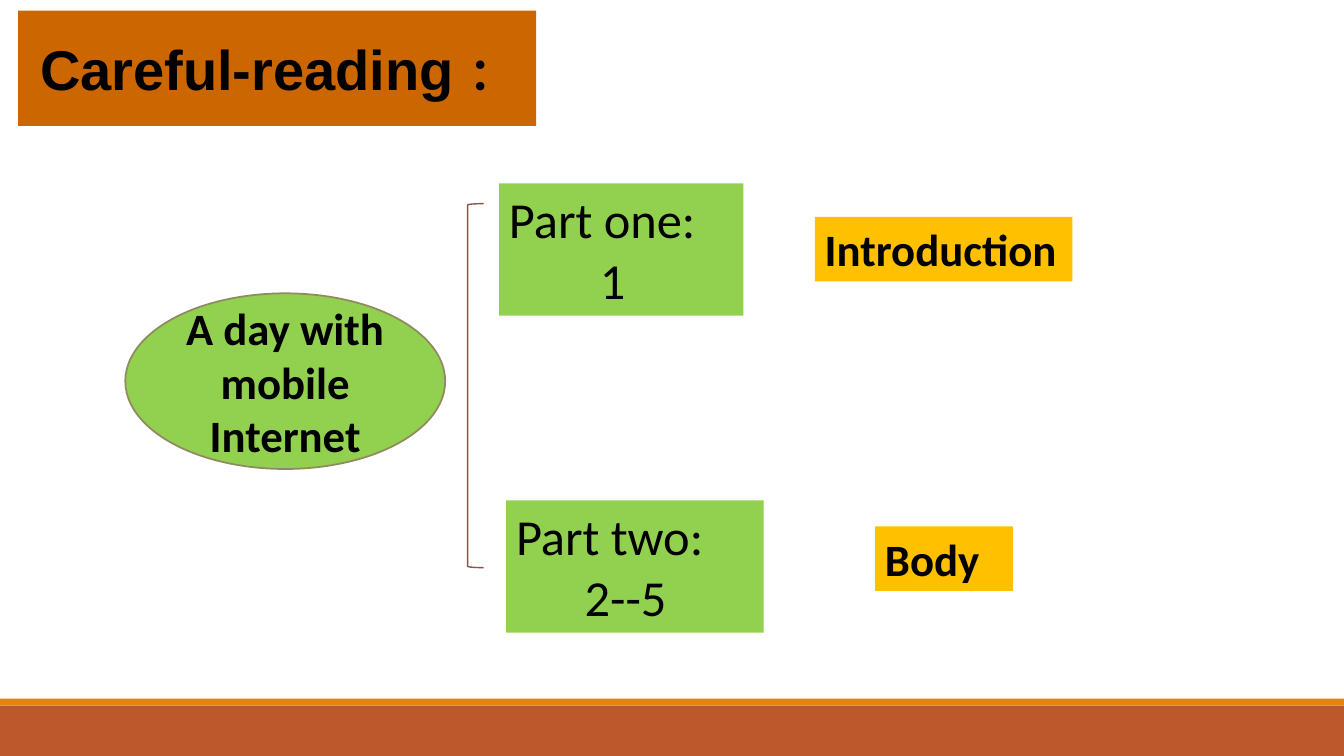
from pptx import Presentation
from pptx.dml.color import RGBColor
from pptx.enum.shapes import MSO_SHAPE as Kind
from pptx.enum.text import MSO_ANCHOR as Anchor, MSO_AUTO_SIZE as Fit, PP_ALIGN as Align
from pptx.util import Pt

WIDE, HIGH = 960, 540
HUES = {
    "brick": "BD582C", "amber": "E48312", "rust": "CC6600", "lime": "92D050",
    "olive": "908B5F", "brown": "865640", "gold": "FFC000", "black": "000000",
}


def hue(name):
    return RGBColor.from_string(HUES[name])


def write(para, text, size=32, font="Calibri", bold=False, align=Align.LEFT, indent=0):
    run = para.add_run()
    run.text = text
    run.font.size = Pt(size)
    run.font.name = font
    run.font.bold = bold
    run.font.color.rgb = hue("black")
    para.alignment = align
    if indent:
        props = para._p.get_or_add_pPr()
        props.set("marL", str(Pt(indent)))
        props.set("indent", "0")


def draw(slide, box, kind=Kind.RECTANGLE, fill=None, line=None, weight=1):
    shape = slide.shapes.add_shape(kind, *map(Pt, box))
    shape.shadow.inherit = False
    if fill:
        shape.fill.solid()
        shape.fill.fore_color.rgb = hue(fill)
    else:
        shape.fill.background()
    if line:
        shape.line.color.rgb = hue(line)
        shape.line.width = Pt(weight)
    else:
        shape.line.fill.background()
    shape.text_frame.word_wrap = True
    return shape


def footer(slide, box):
    left, top, wide, high = box
    strip = 5
    draw(slide, (left, top + strip, wide, high - strip), fill="brick")
    draw(slide, (left, top, wide, strip), fill="amber")


def heading(slide, box):
    title = slide.shapes.title
    title.left, title.top, title.width, title.height = map(Pt, box)
    title.fill.solid()
    title.fill.fore_color.rgb = hue("rust")
    frame = title.text_frame
    frame.auto_size = Fit.NONE
    frame.vertical_anchor = Anchor.MIDDLE
    para = frame.paragraphs[0]
    for text, size in (("Careful-reading ", 40), ("：", 32)):
        write(para, text, size, font="Arial", bold=True, align=Align.CENTER)


def topic(slide, box):
    oval = draw(slide, box, Kind.OVAL, "lime", "olive", 1.25)
    oval.text_frame.vertical_anchor = Anchor.MIDDLE
    write(oval.text_frame.paragraphs[0], "A day with mobile Internet",
          bold=True, align=Align.CENTER)


def part(slide, box, name, paras, indent):
    frame = draw(slide, box, fill="lime").text_frame
    frame.vertical_anchor = Anchor.TOP
    write(frame.paragraphs[0], name, 36)
    write(frame.add_paragraph(), paras, 36, indent=indent)


def label(slide, box, text):
    frame = draw(slide, box, fill="gold").text_frame
    frame.vertical_anchor = Anchor.TOP
    write(frame.paragraphs[0], text, bold=True)


def outline(slide, box):
    """Topic, bracket, and the two parts with their labels."""
    left, top, _, high = box
    topic(slide, (left, top + 78.5, 228.5, 125.5))
    draw(slide, (left + 244.5, top + 14.5, 11.5, 260), Kind.LEFT_BRACKET, line="brown")
    tall, low = 94.5, 46
    base = top + high - tall
    part(slide, (left + 267, top, 174.5, tall), "Part one:", "1", 65)
    part(slide, (left + 272, base, 184, tall), "Part two:", "2--5", 49)
    label(slide, (left + 492.5, top + 24, 184, low), "Introduction")
    label(slide, (left + 535.5, base + 18.5, 98.5, low), "Body")


def main():
    deck = Presentation()
    deck.slide_width, deck.slide_height = Pt(WIDE), Pt(HIGH)
    slide = deck.slides.add_slide(deck.slide_layouts[5])
    footer(slide, (0, 499, WIDE, 41))
    heading(slide, (13, 7.5, 370, 82.5))
    outline(slide, (89.5, 131, 676.5, 321))
    deck.save("out.pptx")


if __name__ == "__main__":
    main()
